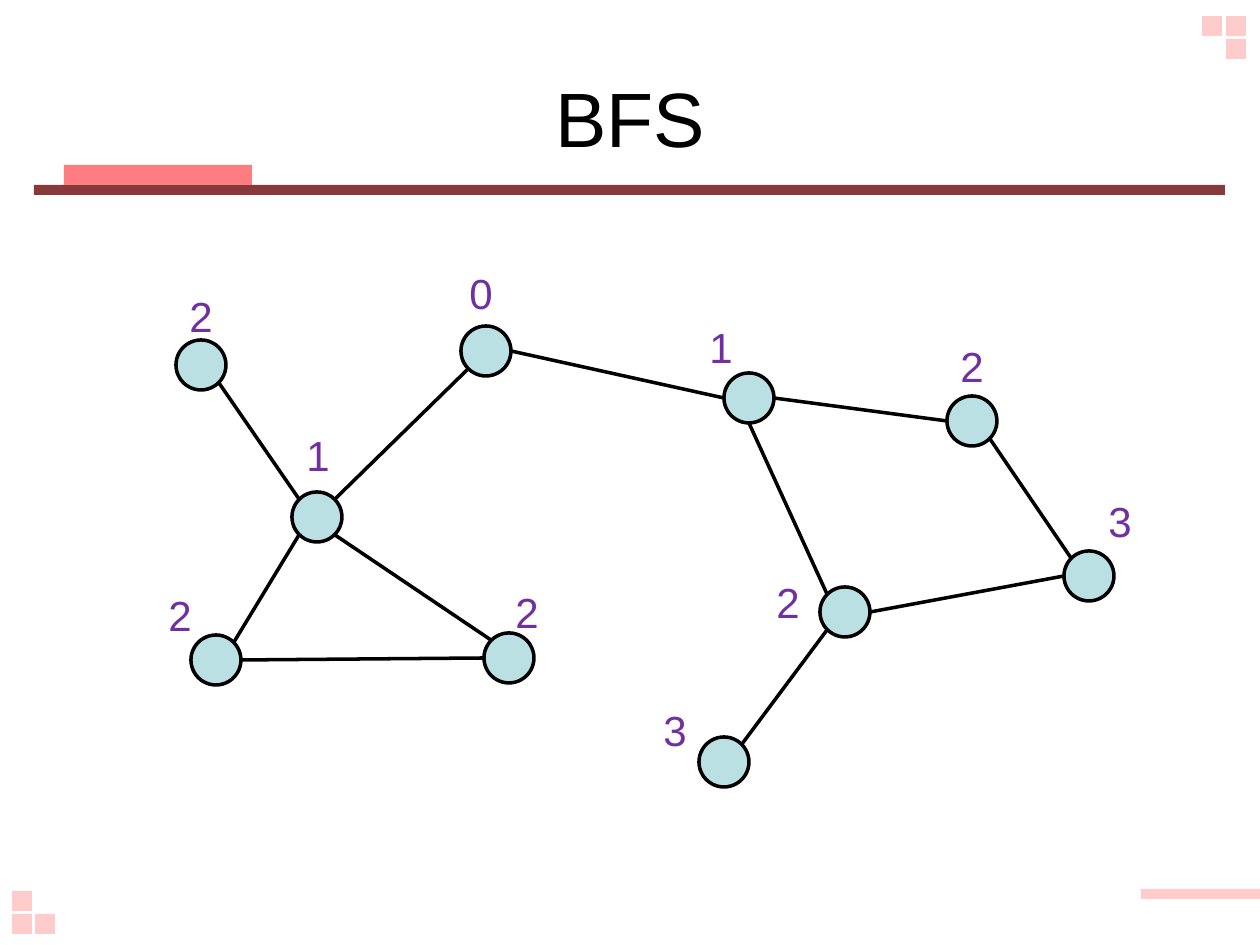
"""Build a slide showing a graph labelled with BFS distances."""
from lxml import etree
from pptx import Presentation
from pptx.dml.color import RGBColor
from pptx.enum.shapes import MSO_CONNECTOR, MSO_SHAPE
from pptx.enum.text import MSO_ANCHOR, MSO_AUTO_SIZE, PP_ALIGN
from pptx.oxml.ns import qn
from pptx.util import Pt

RECT, OVAL = MSO_SHAPE.RECTANGLE, MSO_SHAPE.OVAL
LINE = MSO_CONNECTOR.STRAIGHT
MIDDLE, CENTER = MSO_ANCHOR.MIDDLE, PP_ALIGN.CENTER
GROW = MSO_AUTO_SIZE.SHAPE_TO_FIT_TEXT
SCALE = 914400 / 126
COLORS = {
    "rule": "883A3A", "accent": "FF7C80", "pale": "FFCCCC",
    "node": "BBE0E3", "ink": "000000", "label": "7030A0",
}
C = {name: RGBColor.from_string(value) for name, value in COLORS.items()}


def px(*lengths):
    return [round(n * SCALE) for n in lengths]


def write(tf, text, size, color):
    p = tf.paragraphs[0]
    p.alignment = CENTER
    r = p.add_run()
    r.text = text
    r.font.name = "Arial"
    r.font.size = Pt(size)
    r.font.color.rgb = C[color]


prs = Presentation()
prs.slide_width, prs.slide_height = px(1260, 945)
s = prs.slides.add_slide(prs.slide_layouts[5])

title = s.shapes.title
title.left, title.top, title.width, title.height = px(63, 38, 1134, 158)
title.text_frame.vertical_anchor = MIDDLE
write(title.text_frame, "BFS", 44, "ink")

decorations = [
    (34, 185, 1191, 10, "rule"),
    (64, 165, 188, 20, "accent"),
    (1141, 889, 119, 10, "pale"),
]
for x, y in [(1226, 16), (1202, 16), (1226, 39), (12, 914), (35, 914), (12, 891)]:
    decorations.append((x, y, 20, 20, "pale"))
for x, y, w, h, color in decorations:
    sp = s.shapes.add_shape(RECT, *px(x, y, w, h))
    sp.shadow.inherit = False
    sp.fill.solid()
    sp.fill.fore_color.rgb = C[color]
    sp.line.fill.background()

RADIUS, DIAGONAL = 25, 18
nodes = {
    "root": (486, 351, "0", 435, 261),
    "hub": (317, 517, "1", 272, 423),
    "low_right": (509, 658, "2", 481, 580),
    "gate": (749, 398, "1", 675, 315),
    "tail": (724, 762, "3", 629, 698),
    "upper": (972, 421, "2", 926, 334),
    "far": (1089, 576, "3", 1074, 489),
    "inner": (845, 612, "2", 742, 570),
    "low_left": (216, 660, "2", 134, 583),
    "top_left": (201, 365, "2", 155, 284),
}
for x, y, distance, label_x, label_y in nodes.values():
    sp = s.shapes.add_shape(OVAL, *px(x - RADIUS, y - RADIUS, 2 * RADIUS, 2 * RADIUS))
    sp.shadow.inherit = False
    sp.fill.solid()
    sp.fill.fore_color.rgb = C["node"]
    sp.line.color.rgb = C["ink"]
    sp.line.width = Pt(2)

    box = s.shapes.add_textbox(*px(label_x, label_y, 92, 63))
    box.text_frame.word_wrap = True
    box.text_frame.auto_size = GROW
    write(box.text_frame, distance, 24, "label")

sides = {
    "E": (RADIUS, 0), "W": (-RADIUS, 0), "S": (0, RADIUS),
    "NE": (DIAGONAL, -DIAGONAL), "NW": (-DIAGONAL, -DIAGONAL),
    "SE": (DIAGONAL, DIAGONAL), "SW": (-DIAGONAL, DIAGONAL),
}
edges = [
    ("top_left", "SE", "hub", "NW"),
    ("hub", "NE", "root", "SW"),
    ("hub", "SW", "low_left", "NE"),
    ("hub", "SE", "low_right", "NW"),
    ("low_left", "E", "low_right", "W"),
    ("gate", "W", "root", "E"),
    ("gate", "S", "inner", "NW"),
    ("inner", "SW", "tail", "NE"),
    ("inner", "E", "far", "W"),
    ("gate", "E", "upper", "W"),
    ("upper", "SE", "far", "NW"),
]
for start, start_side, end, end_side in edges:
    ends = []
    for node, side in [(start, start_side), (end, end_side)]:
        x, y = nodes[node][:2]
        dx, dy = sides[side]
        ends += px(x + dx, y + dy)
    edge = s.shapes.add_connector(LINE, *ends)
    edge.line.color.rgb = C["ink"]
    edge.line.width = Pt(2)
    etree.SubElement(edge._element.spPr, qn("a:effectLst"))

prs.save("out.pptx")
